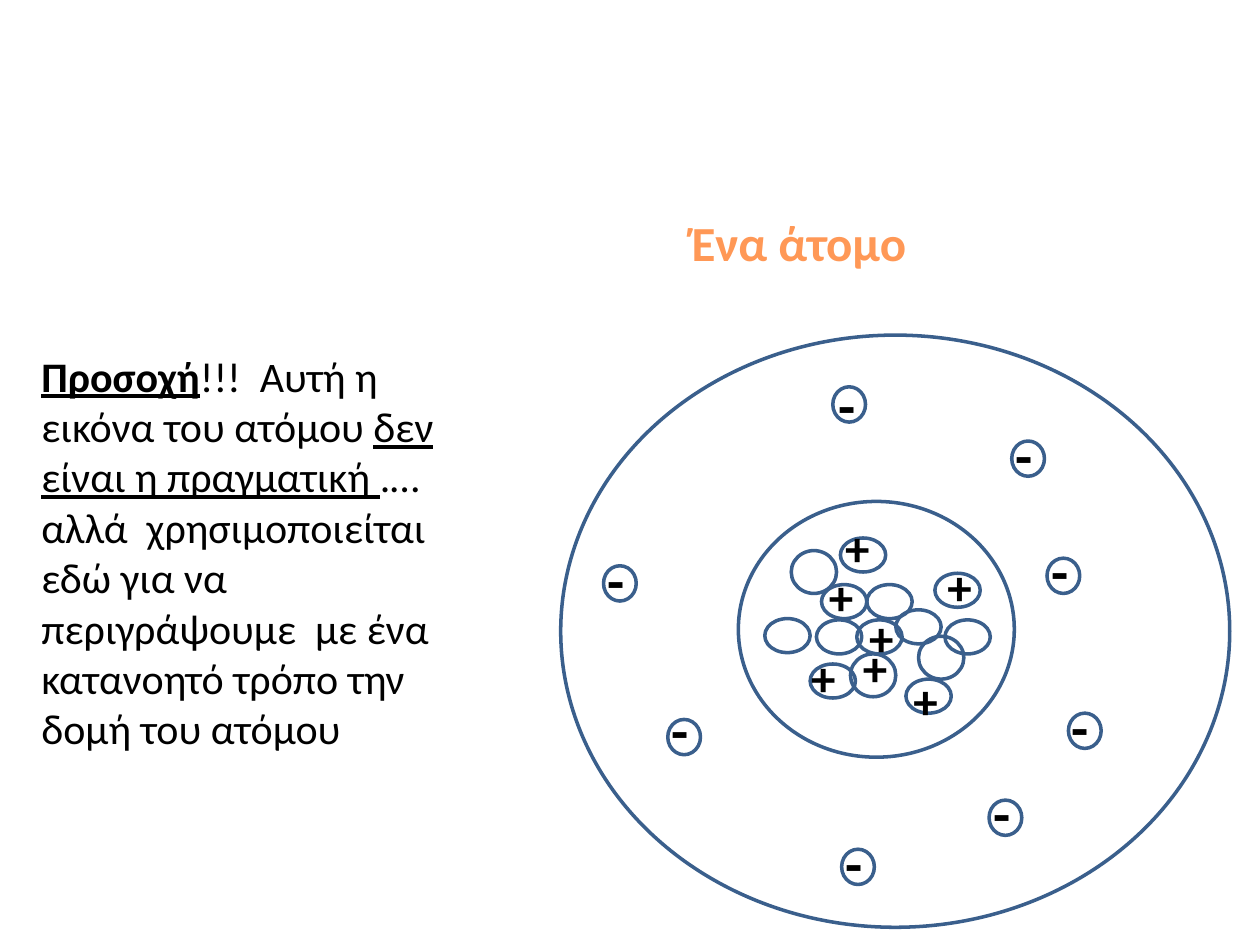
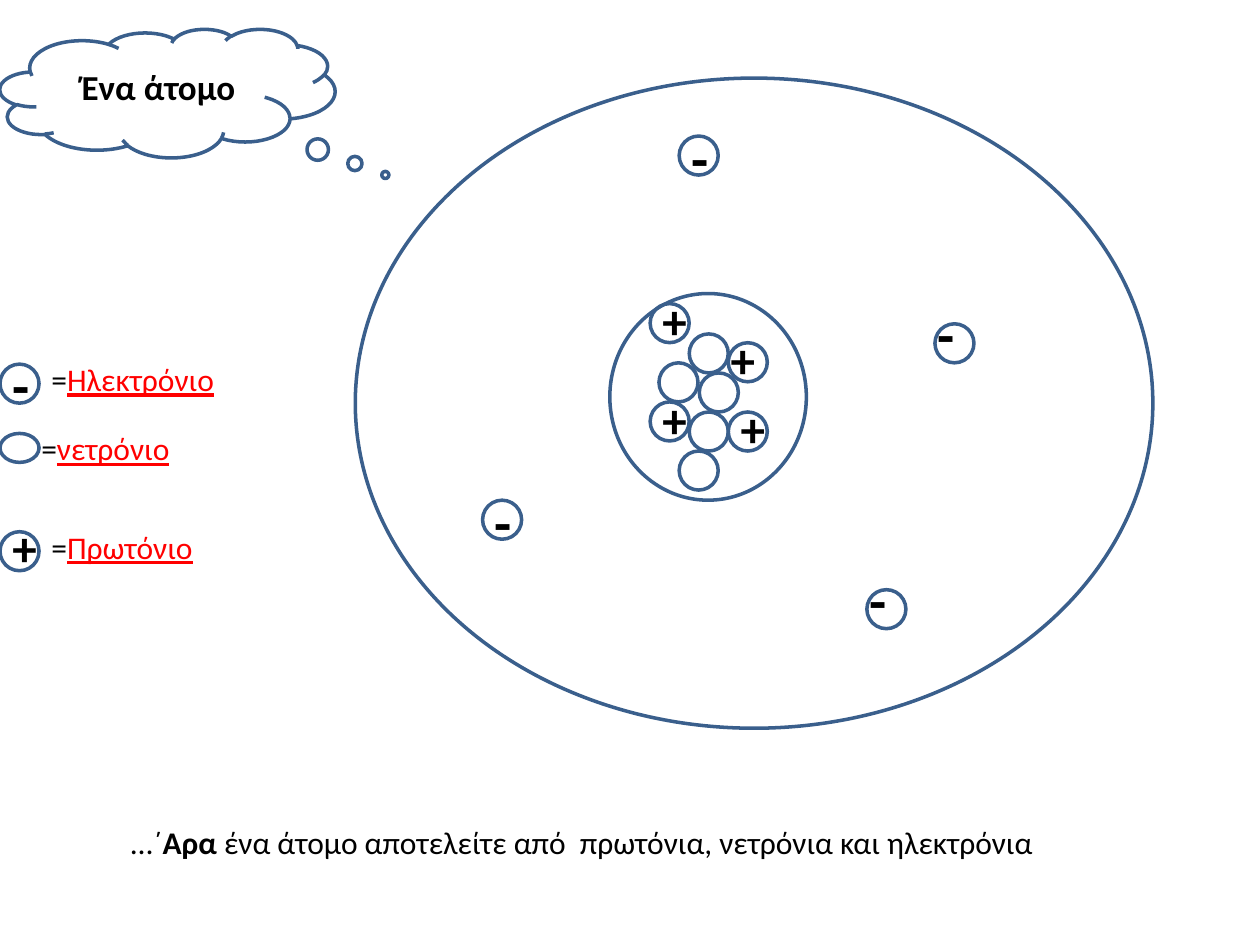
from dataclasses import dataclass

from pptx import Presentation
from pptx.dml.color import RGBColor
from pptx.enum.shapes import MSO_SHAPE
from pptx.util import Inches, Pt

OVAL = MSO_SHAPE.OVAL
CLOUD = MSO_SHAPE.CLOUD_CALLOUT
BLANK_LAYOUT = 6


@dataclass(frozen=True)
class Theme:
    font: str = "Calibri"
    outline: RGBColor = RGBColor(0x3A, 0x5F, 0x8C)
    ink: RGBColor = RGBColor(0, 0, 0)
    heading: RGBColor = RGBColor(0xFF, 0x98, 0x56)
    term: RGBColor = RGBColor(0xFF, 0, 0)
    outline_width: int = 2
    heading_size: int = 28
    notice_size: int = 24
    cloud_size: int = 20
    body_size: int = 18
    plus_size: int = 28
    minus_size: int = 32


THEME = Theme()
SIGN_SIZES = {"+": THEME.plus_size, "-": THEME.minus_size}
SIGN_BOX = (0.4, 0.57)

# Charged particles: left, top, then the shift of the sign from the circle.
# Neutrons: left, top. All are measured from the corner of the atom.
# A particle in "tall" takes the tall size instead of the usual one.
CARBON_LIKE = {
    "nucleus": (1.41, 1.32, 2.19, 2.03),
    "electron_size": (0.26, 0.28),
    "nucleon_size": (0.36, 0.27),
    "tall_size": (0.36, 0.34),
    "tall": {(2.3, 2.53), (1.83, 1.71), (2.84, 2.39)},
    "electrons": [
        (3.86, 1.77, -0.06, -0.22), (0.85, 3.05, -0.07, -0.24),
        (2.16, 0.41, -0.05, -0.18), (3.4, 3.69, -0.06, -0.22),
        (4.03, 3.0, -0.07, -0.21), (0.34, 1.83, -0.07, -0.21),
        (3.58, 0.84, -0.07, -0.21), (2.23, 4.08, -0.07, -0.21),
    ],
    "protons": [
        (2.22, 1.61, -0.06, -0.21), (2.07, 1.98, -0.04, -0.19),
        (2.97, 1.89, 0, -0.18), (2.35, 2.26, 0, -0.15),
        (2.3, 2.53, 0, -0.18), (1.98, 2.61, -0.09, -0.18),
        (2.74, 2.73, -0.04, -0.12),
    ],
    "neutrons": [
        (1.83, 1.71), (2.84, 2.39), (2.43, 1.98), (2.66, 2.18),
        (1.62, 2.25), (2.03, 2.26), (3.05, 2.26),
    ],
}
BERYLLIUM_LIKE = {
    "nucleus": (2.02, 1.71, 1.56, 1.64),
    "electron_size": (0.31, 0.31),
    "nucleon_size": (0.31, 0.31),
    "tall_size": (0.31, 0.31),
    "tall": set(),
    "electrons": [
        (4.6, 1.95, -0.08, -0.24), (1.01, 3.35, 0, -0.15),
        (2.57, 0.46, 0, -0.15), (4.06, 4.06, -0.08, -0.24),
    ],
    "protons": [
        (2.96, 2.65, 0, -0.16), (2.96, 2.1, -0.08, -0.15),
        (2.34, 2.57, 0, -0.15), (2.34, 1.79, 0, -0.15),
    ],
    "neutrons": [
        (2.65, 2.65), (2.65, 2.03), (2.41, 2.26), (2.73, 2.34), (2.57, 2.96),
    ],
}

# Term, sign, circle height, circle top, label left.
LEGEND = [
    ("Ηλεκτρόνιο", "-", 0.31, 0, 0.31),
    ("νετρόνιο", None, 0.23, 0.55, 0.23),
    ("Πρωτόνιο", "+", 0.31, 1.33, 0.31),
]


def add_outline(slide, box, preset=OVAL):
    outline = slide.shapes.add_shape(preset, *map(Inches, box))
    outline.shadow.inherit = False
    outline.fill.background()
    outline.line.color.rgb = THEME.outline
    outline.line.width = Pt(THEME.outline_width)
    return outline


def add_text(slide, box, size, *parts):
    """Write one paragraph; each part is (text, style) with font attributes."""
    frame = slide.shapes.add_textbox(*map(Inches, box)).text_frame
    frame.word_wrap = True
    for text, style in parts:
        run = frame.paragraphs[0].add_run()
        run.text = text
        run.font.name = THEME.font
        run.font.size = Pt(size)
        run.font.bold = style.get("bold", False)
        run.font.underline = style.get("underline", False)
        run.font.color.rgb = style.get("color", THEME.ink)


def add_particle(slide, box, sign=None, shift=(0, 0)):
    add_outline(slide, box)
    if sign:
        sign_box = (box[0] + shift[0], box[1] + shift[1], *SIGN_BOX)
        add_text(slide, sign_box, SIGN_SIZES[sign], (sign, {"bold": True}))


def add_atom(slide, box, atom):
    left, top = box[:2]
    add_outline(slide, box)
    x, y, width, height = atom["nucleus"]
    add_outline(slide, (left + x, top + y, width, height))
    for kind, sign, usual_size in (
        ("electrons", "-", atom["electron_size"]),
        ("protons", "+", atom["nucleon_size"]),
        ("neutrons", None, atom["nucleon_size"]),
    ):
        for x, y, *shift in atom[kind]:
            size = atom["tall_size"] if (x, y) in atom["tall"] else usual_size
            add_particle(slide, (left + x, top + y, *size), sign, shift)


def add_legend(slide, left, top):
    for term, sign, height, offset, label_left in LEGEND:
        row = top + offset
        add_particle(slide, (left, row, 0.31, height), sign, (0, -0.16))
        add_text(slide, (left + label_left, row - 0.08, 1.8, 0.4),
                 THEME.body_size, ("=", {}),
                 (term, {"color": THEME.term, "underline": True}))


def add_thought_cloud(slide, box):
    cloud = add_outline(slide, box, CLOUD)
    cloud.adjustments[0] = 0.65
    cloud.adjustments[1] = 0.636
    left, top, width, _ = box
    add_text(slide, (left + 0.55, top + 0.24, width, 0.44),
             THEME.cloud_size, ("Ένα άτομο", {"bold": True}))


def build_model_slide(slide):
    add_text(slide, (0.23, 2.73, 3.59, 3.33), THEME.notice_size,
             ("Προσοχή", {"bold": True, "underline": True}),
             ("!!!  Αυτή η εικόνα του ατόμου ", {}),
             ("δεν είναι η πραγματική ", {"underline": True}),
             (".…αλλά  χρησιμοποιείται εδώ για να περιγράψουμε  με ένα "
              "κατανοητό τρόπο την δομή του ατόμου", {}))
    add_atom(slide, (4.45, 2.66, 5.31, 4.7), CARBON_LIKE)
    add_text(slide, (5.39, 1.64, 3.44, 0.57), THEME.heading_size,
             ("Ένα άτομο", {"bold": True, "color": THEME.heading}))


def build_parts_slide(slide):
    add_thought_cloud(slide, (0, 0.23, 2.66, 1.02))
    add_atom(slide, (2.82, 0.62, 6.33, 5.16), BERYLLIUM_LIKE)
    add_legend(slide, 0, 2.89)
    add_text(slide, (0.94, 6.48, 7.73, 0.4), THEME.body_size,
             ("…΄", {}), ("Αρα", {"bold": True}),
             (" ένα άτομο αποτελείτε από  πρωτόνια, νετρόνια και ηλεκτρόνια",
              {}))


def main():
    deck = Presentation()
    deck.slide_width, deck.slide_height = Inches(10), Inches(7.5)
    for build in (build_model_slide, build_parts_slide):
        build(deck.slides.add_slide(deck.slide_layouts[BLANK_LAYOUT]))
    deck.save("out.pptx")


if __name__ == "__main__":
    main()
